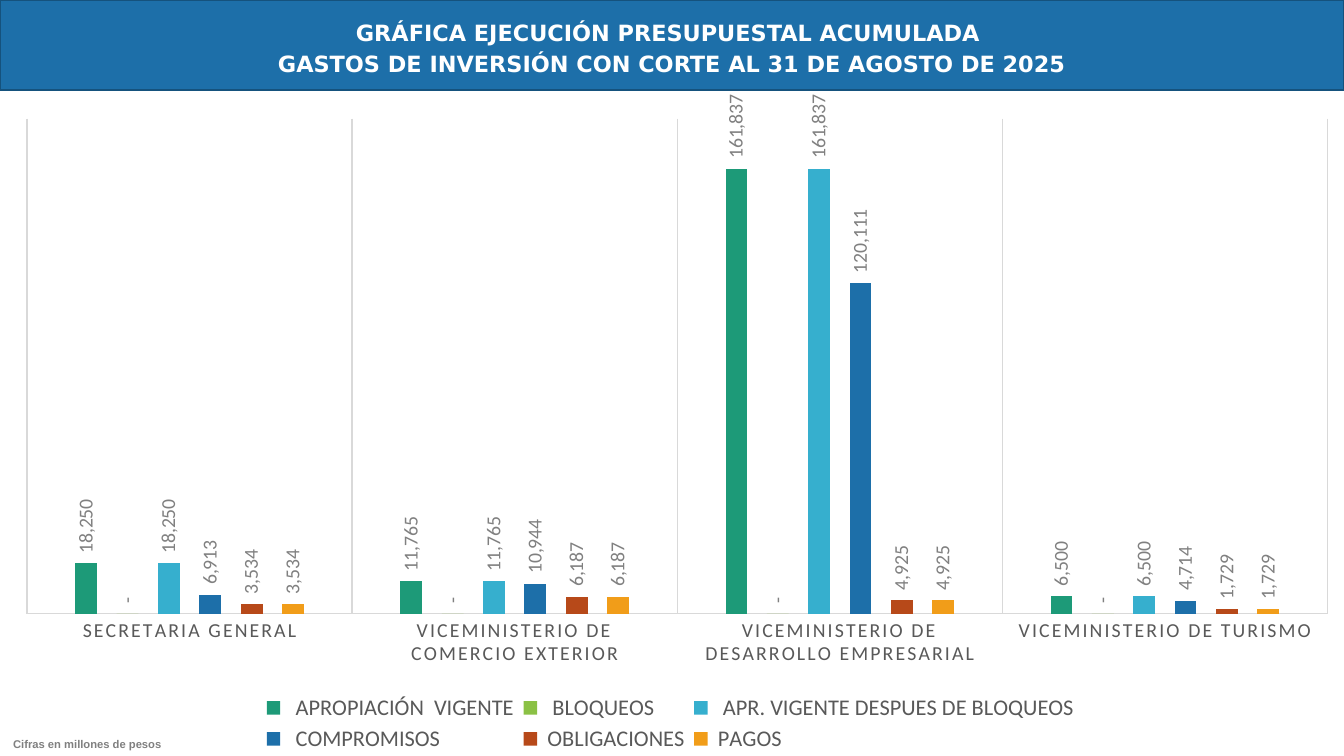
from lxml import etree
from pptx import Presentation
from pptx.chart.data import CategoryChartData
from pptx.dml.color import RGBColor
from pptx.enum.chart import (XL_CHART_TYPE, XL_LABEL_POSITION,
                             XL_LEGEND_POSITION, XL_TICK_MARK)
from pptx.enum.text import MSO_ANCHOR, MSO_AUTO_SIZE, PP_ALIGN
from pptx.oxml.ns import qn
from pptx.util import Inches, Pt

CLUSTERED = XL_CHART_TYPE.COLUMN_CLUSTERED
OUTSIDE_END = XL_LABEL_POSITION.OUTSIDE_END
BOTTOM = XL_LEGEND_POSITION.BOTTOM
NO_TICK = XL_TICK_MARK.NONE
MIDDLE = MSO_ANCHOR.MIDDLE
CENTER = PP_ALIGN.CENTER
NO_AUTOFIT = MSO_AUTO_SIZE.NONE

WIDTH = 10
HEIGHT = WIDTH * 9 / 16
BANNER_HEIGHT = 0.67
TITLE_ONLY = 5
COLORS = {
    "white": "FFFFFF", "banner": "1D6FA9", "banner line": "15527D",
    "text": "595959", "label": "808080", "grid": "D9D9D9",
    "green": "1D9A78", "lime": "8BC145", "sky": "36AFCE",
    "blue": "1D6FA9", "rust": "B74919", "amber": "F19D19",
}
NUMBER_FORMAT = '_-* #,##0_-;\\-* #,##0_-;_-* "-"??_-;_-@_'

TITLE_LINES = ["GRÁFICA EJECUCIÓN PRESUPUESTAL ACUMULADA ",
               "GASTOS DE INVERSIÓN CON CORTE AL 31 DE AGOSTO DE 2025"]
CATEGORIES = ["SECRETARIA GENERAL", "VICEMINISTERIO DE COMERCIO EXTERIOR",
              "VICEMINISTERIO DE DESARROLLO EMPRESARIAL",
              "VICEMINISTERIO DE TURISMO"]
SERIES = [
    ("  APROPIACIÓN  VIGENTE", "green", (18250, 11765, 161837, 6500)),
    ("  BLOQUEOS", "lime", (0, 0, 0, 0)),
    ("  APR. VIGENTE DESPUES DE BLOQUEOS", "sky",
     (18250, 11765, 161837, 6500)),
    ("  COMPROMISOS ", "blue", (6913, 10944, 120111, 4714)),
    (" OBLIGACIONES", "rust", (3534, 6187, 4925, 1729)),
    (" PAGOS", "amber", (3534, 6187, 4925, 1729)),
]


def rgb(name):
    return RGBColor.from_string(COLORS[name])


def set_font(font, name, size, color, bold=False):
    font.name, font.size, font.bold = name, Pt(size), bold
    font.color.rgb = rgb(color)


def set_fill(fill, color):
    fill.solid()
    fill.fore_color.rgb = rgb(color)


def set_line(line, color, width):
    line.color.rgb = rgb(color)
    line.width = Pt(width)


def place(box, left, top, width, height):
    box.left, box.top = Inches(left), Inches(top)
    box.width, box.height = Inches(width), Inches(height)


def set_layout(parent, index, shares, inner=False):
    """Fix a chart part at x, y, w, h, given as shares of the chart."""
    for old in parent.findall(qn("c:layout")):
        parent.remove(old)
    layout = etree.Element(qn("c:layout"))
    parent.insert(index, layout)
    manual = etree.SubElement(layout, qn("c:manualLayout"))
    settings = [("layoutTarget", "inner")] if inner else []
    settings += [("xMode", "edge"), ("yMode", "edge")]
    settings += zip("xywh", shares)
    for tag, value in settings:
        etree.SubElement(manual, qn(f"c:{tag}")).set("val", str(value))


def add_banner(slide):
    banner = slide.shapes.title
    place(banner, 0, 0, WIDTH, BANNER_HEIGHT)
    set_fill(banner.fill, "banner")
    set_line(banner.line, "banner line", 1)
    frame = banner.text_frame
    frame.text = "\n".join(TITLE_LINES)
    frame.word_wrap, frame.auto_size = True, NO_AUTOFIT
    frame.vertical_anchor = MIDDLE
    frame.margin_left = frame.margin_right = frame.margin_bottom = 0
    frame.margin_top = Inches(0.07)
    for paragraph in frame.paragraphs:
        paragraph.alignment = CENTER
        paragraph.line_spacing, paragraph.space_before = 0.9, Pt(3.6)
        set_font(paragraph.font, "DejaVu Sans", 12, "white", bold=True)


def add_note(slide, text):
    box = slide.shapes.add_textbox(0, 0, 0, 0)
    place(box, 0, 5.45, 1.83, 0.19)
    box.text_frame.word_wrap = True
    paragraph = box.text_frame.paragraphs[0]
    paragraph.text = text
    paragraph.line_spacing, paragraph.space_before = 0.9, Pt(8)
    set_font(paragraph.font, "Arial", 6, "label", bold=True)


def style_axes(chart):
    category = chart.category_axis
    category.major_tick_mark = category.minor_tick_mark = NO_TICK
    category.has_major_gridlines = True
    for line in (category.format.line, category.major_gridlines.format.line):
        set_line(line, "grid", 0.75)
    set_font(category.tick_labels.font, "Calibri", 10.6, "text")
    # Letter spacing of the category names
    category._element.find(".//" + qn("a:defRPr")).set("spc", "120")

    value = chart.value_axis
    value.visible = value.has_major_gridlines = False
    value.minimum_scale, value.maximum_scale = 0, 180000
    value.tick_labels.number_format = NUMBER_FORMAT
    value.tick_labels.number_format_is_linked = False


def style_series(series, color):
    set_fill(series.format.fill, color)
    series.invert_if_negative = False
    labels = series.data_labels
    labels.show_value, labels.position = True, OUTSIDE_END
    labels.number_format = NUMBER_FORMAT
    labels.number_format_is_linked = False
    set_font(labels.font, "Calibri", 10.6, "label")
    # Upright labels that read from bottom to top
    body = labels._element.find(".//" + qn("a:bodyPr"))
    body.set("rot", "-5400000")
    body.set("vert", "horz")


def add_budget_chart(slide):
    data = CategoryChartData()
    data.categories = CATEGORIES
    for name, _, values in SERIES:
        data.add_series(name, values)
    frame = slide.shapes.add_chart(CLUSTERED, 0, Inches(BANNER_HEIGHT),
                                   Inches(10.08), Inches(4.96), data)
    chart = frame.chart
    chart.has_title = False
    chart.font.name, chart.font.size = "Calibri", Pt(10)
    chart.font.color.rgb = RGBColor(0, 0, 0)
    plot = chart.plots[0]
    plot.gap_width, plot.overlap = 444, -90
    plot.vary_by_categories = False
    for series, (_, color, _) in zip(plot.series, SERIES):
        style_series(series, color)
    style_axes(chart)

    # Legend in two rows below the plot
    chart.has_legend = True
    legend = chart.legend
    legend.position, legend.include_in_layout = BOTTOM, False
    set_font(legend.font, "Calibri", 12, "text")
    set_layout(legend._element, 1, (0.19, 0.9, 0.61, 0.1))
    plot_area = chart._chartSpace.find(".//" + qn("c:plotArea"))
    set_layout(plot_area, 0, (0.02, 0.04, 0.96, 0.745), inner=True)


def main():
    deck = Presentation()
    deck.slide_width, deck.slide_height = Inches(WIDTH), Inches(HEIGHT)
    slide = deck.slides.add_slide(deck.slide_layouts[TITLE_ONLY])
    set_fill(slide.background.fill, "white")
    add_banner(slide)
    add_note(slide, "Cifras en millones de pesos")
    add_budget_chart(slide)
    deck.save("out.pptx")


if __name__ == "__main__":
    main()
